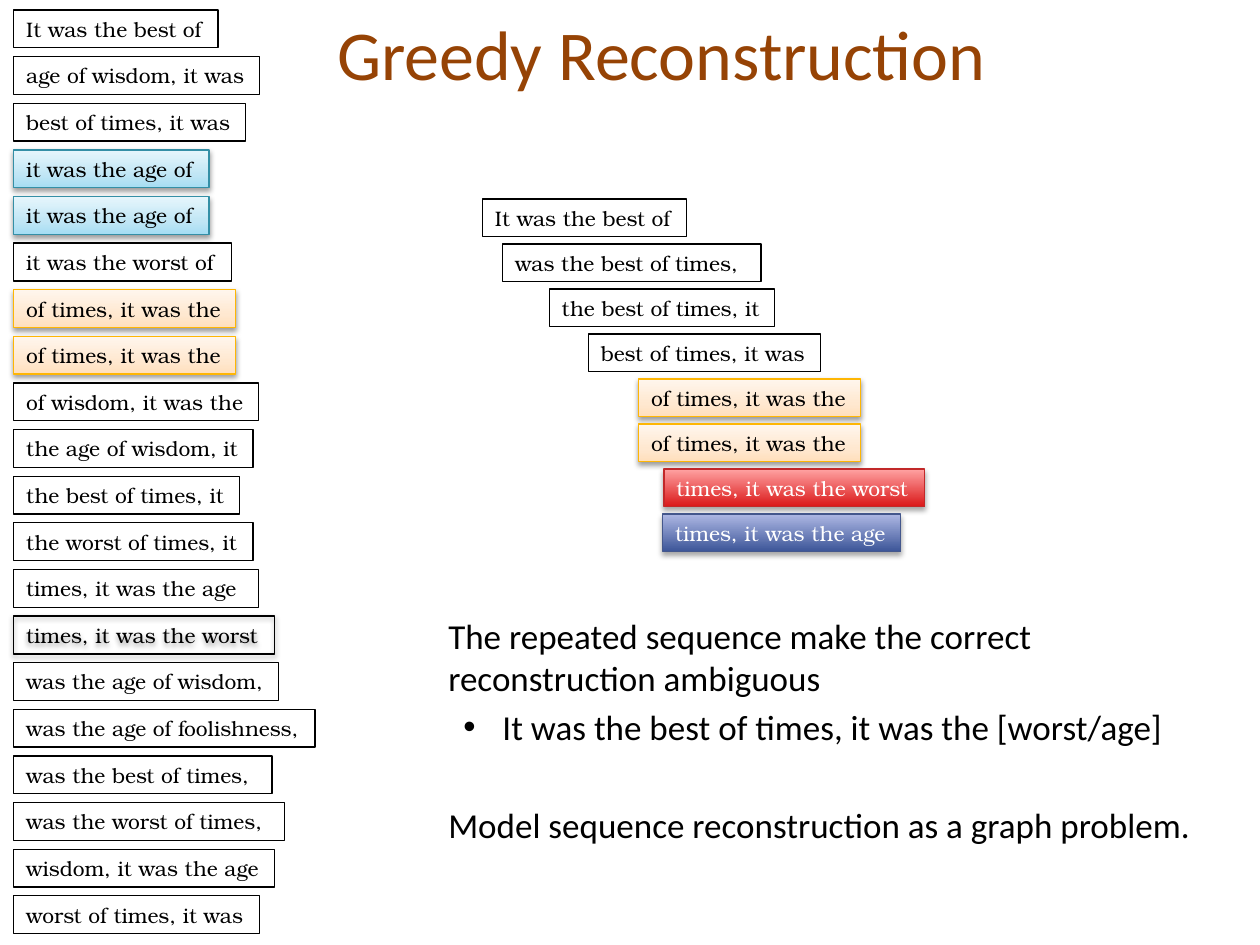
from copy import deepcopy

from lxml.etree import SubElement
from pptx import Presentation
from pptx.dml.color import RGBColor
from pptx.enum.shapes import MSO_SHAPE
from pptx.enum.text import MSO_ANCHOR, PP_ALIGN
from pptx.oxml.ns import qn
from pptx.util import Inches, Pt

BLACK = RGBColor(0x00, 0x00, 0x00)
WHITE = RGBColor(0xFF, 0xFF, 0xFF)
BROWN = RGBColor(0x96, 0x43, 0x05)

CYAN_LINE = RGBColor(0x34, 0x8F, 0xA6)
CYAN_STOPS = [(0, RGBColor(0xA5, 0xDD, 0xF3)), (0.35, RGBColor(0xC1, 0xE6, 0xF5)),
              (1, RGBColor(0xE6, 0xF6, 0xFC))]
ORANGE_LINE = RGBColor(0xFE, 0xB6, 0x04)
ORANGE_STOPS = [(0, RGBColor(0xFF, 0xDF, 0xBC)), (0.35, RGBColor(0xFF, 0xE8, 0xD0)),
                (1, RGBColor(0xFF, 0xF6, 0xED))]
RED_LINE = RGBColor(0xC2, 0x28, 0x29)
RED_STOPS = [(0, RGBColor(0xDA, 0x17, 0x18)), (1, RGBColor(0xFF, 0xA3, 0xA3))]
BLUE_LINE = RGBColor(0x44, 0x57, 0x8C)
BLUE_STOPS = [(0, RGBColor(0x3C, 0x55, 0x98)), (1, RGBColor(0xAE, 0xB8, 0xE4))]

SOFT = (38, 1.6)
STRONG = (35, 1.8)
STYLES = {
    "plain": (BLACK, None, BLACK, None),
    "shadowed": (BLACK, None, BLACK, SOFT),
    "cyan": (CYAN_LINE, CYAN_STOPS, BLACK, SOFT),
    "orange": (ORANGE_LINE, ORANGE_STOPS, BLACK, SOFT),
    "red": (RED_LINE, RED_STOPS, WHITE, STRONG),
    "blue": (BLUE_LINE, BLUE_STOPS, WHITE, STRONG),
}

FRAGMENTS = [
    (0, 1.62, "It was the best of", "plain"),
    (0, 1.95, "age of wisdom, it was", "plain"),
    (0, 1.84, "best of times, it was", "plain"),
    (0, 1.55, "it was the age of", "cyan"),
    (0, 1.55, "it was the age of", "cyan"),
    (0, 1.73, "it was the worst of", "plain"),
    (0, 1.76, "of times, it was the", "orange"),
    (0, 1.76, "of times, it was the", "orange"),
    (0, 1.94, "of wisdom, it was the", "plain"),
    (0, 1.9, "the age of wisdom, it", "plain"),
    (0, 1.79, "the best of times, it", "plain"),
    (0, 1.9, "the worst of times, it", "plain"),
    (0, 1.94, "times, it was the age", "plain"),
    (0, 2.07, "times, it was the worst", "shadowed"),
    (0, 2.1, "was the age of wisdom,", "plain"),
    (0, 2.39, "was the age of foolishness,", "plain"),
    (0, 2.05, "was the best of times,", "plain"),
    (0, 2.15, "was the worst of times,", "plain"),
    (0, 2.07, "wisdom, it was the age", "plain"),
    (0, 1.95, "worst of times, it was", "plain"),
]
ASSEMBLY = [
    (0, 1.62, "It was the best of", "plain"),
    (0.16, 2.05, "was the best of times,", "plain"),
    (0.53, 1.79, "the best of times, it", "plain"),
    (0.84, 1.84, "best of times, it was", "plain"),
    (1.24, 1.76, "of times, it was the", "orange"),
    (1.24, 1.76, "of times, it was the", "orange"),
    (1.44, 2.07, "times, it was the worst", "red"),
    (1.43, 1.89, "times, it was the age", "blue"),
]
ROW_HEIGHT = 0.3


def add_run(p, text, font, size, color):
    r = p.add_run()
    r.text = text
    r.font.name = font
    r.font.size = Pt(size)
    r.font.color.rgb = color


def fill_gradient(sp, stops):
    sp.fill.gradient()
    sp.fill.gradient_angle = 90
    gs_list = sp._element.spPr.find(".//" + qn("a:gsLst"))
    if len(stops) == 3:
        gs_list.append(deepcopy(gs_list[-1]))
    for stop, (position, color) in zip(sp.fill.gradient_stops, stops):
        stop.position = position
        stop.color.rgb = color


def add_shadow(sp, opacity, distance):
    effects = sp._element.spPr.find(qn("a:effectLst"))
    shadow = SubElement(effects, qn("a:outerShdw"), blurRad=str(Pt(3.1)),
                        dist=str(Pt(distance)), dir="5400000", rotWithShape="0")
    color = SubElement(shadow, qn("a:srgbClr"), val=str(BLACK))
    SubElement(color, qn("a:alpha"), val=str(opacity * 1000))


def add_fragment(slide, x, y, width, text, style):
    line, stops, text_color, shadow = STYLES[style]
    sp = slide.shapes.add_shape(MSO_SHAPE.RECTANGLE, Inches(x), Inches(y),
                                Inches(width), Inches(ROW_HEIGHT))
    sp.shadow.inherit = False
    sp.line.color.rgb = line
    sp.line.width = Pt(0.75)
    if stops:
        fill_gradient(sp, stops)
    else:
        sp.fill.background()
    if shadow:
        add_shadow(sp, *shadow)
    tf = sp.text_frame
    tf.word_wrap = True
    tf.margin_right = 0
    tf.vertical_anchor = MSO_ANCHOR.MIDDLE
    p = tf.paragraphs[0]
    p.alignment = PP_ALIGN.LEFT
    add_run(p, text, "TeX Gyre Bonum", 12, text_color)


def add_fragments(slide, box, fragments):
    left, top, height = box
    pitch = (height - ROW_HEIGHT) / (len(fragments) - 1)
    for row, (offset, width, text, style) in enumerate(fragments):
        add_fragment(slide, left + offset, top + row * pitch, width, text, style)


def add_text_frame(slide, box):
    tf = slide.shapes.add_textbox(*map(Inches, box)).text_frame
    tf.word_wrap = True
    return tf


def add_title(slide, box):
    tf = add_text_frame(slide, box)
    tf.vertical_anchor = MSO_ANCHOR.MIDDLE
    p = tf.paragraphs[0]
    p.alignment = PP_ALIGN.CENTER
    add_run(p, "Greedy Reconstruction", "Calibri", 40, BROWN)


def add_notes(slide, box):
    tf = add_text_frame(slide, box)
    notes = [
        ("The repeated sequence make the correct reconstruction ambiguous", False, 4),
        ("It was the best of times, it was the [worst/age]", True, 4),
        ("Model sequence reconstruction as a graph problem.", False, 32),
    ]
    for i, (text, bulleted, space) in enumerate(notes):
        p = tf.add_paragraph() if i else tf.paragraphs[0]
        p.space_before = Pt(space)
        pPr = p._p.get_or_add_pPr()
        pPr.set("marL", str(Inches(0.81 if bulleted else 0.38)))
        pPr.set("indent", str(Inches(-0.31 if bulleted else 0)))
        if bulleted:
            p.level = 1
            SubElement(pPr, qn("a:buFont"), typeface="Arial")
            SubElement(pPr, qn("a:buChar"), char="•")
        add_run(p, text, "Calibri", 20, BLACK)


def main():
    prs = Presentation()
    prs.slide_width = Inches(10)
    prs.slide_height = Inches(7.5)
    slide = prs.slides.add_slide(prs.slide_layouts[6])
    add_title(slide, (0.75, 0.08, 9, 0.67))
    add_fragments(slide, (3.83, 1.58, 2.8), ASSEMBLY)
    add_fragments(slide, (0.11, 0.08, 7.33), FRAGMENTS)
    add_notes(slide, (3.08, 4.83, 6.67, 2.67))
    prs.save("out.pptx")


if __name__ == "__main__":
    main()
